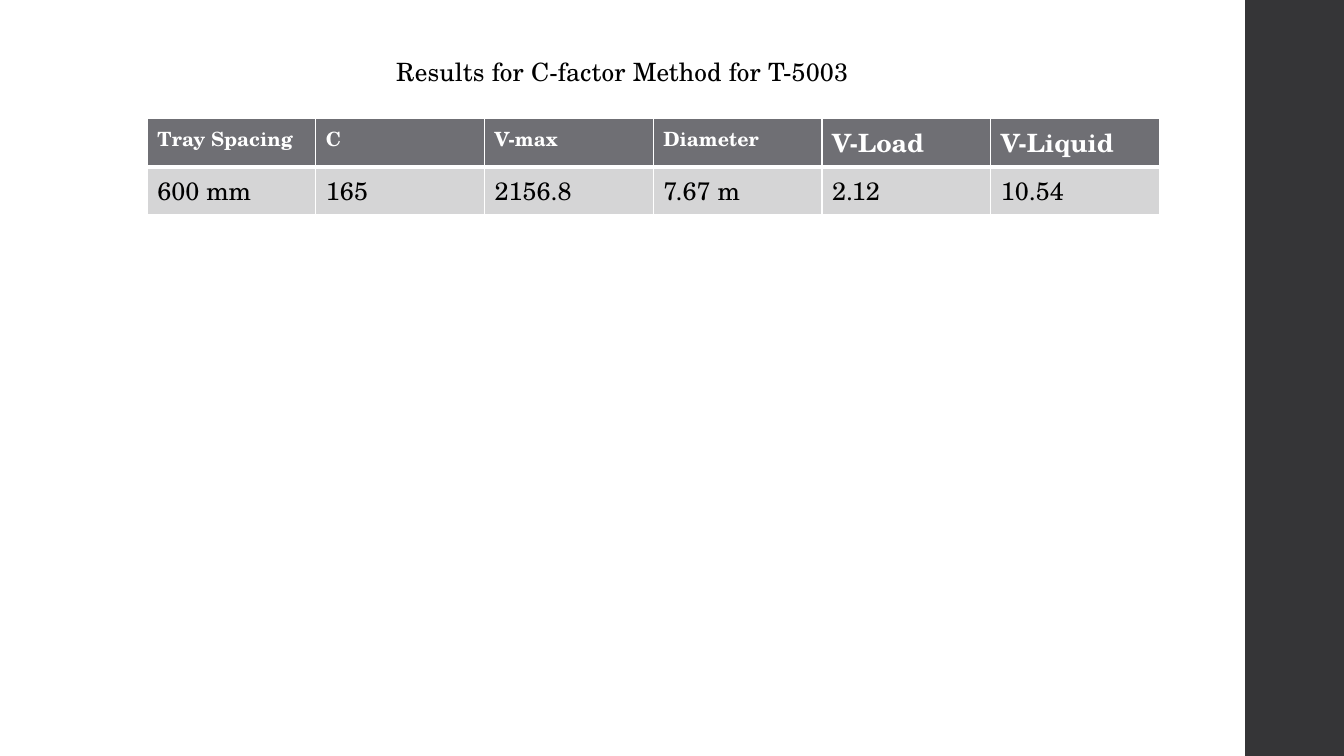
from lxml.etree import SubElement
from pptx import Presentation
from pptx.dml.color import RGBColor
from pptx.enum.shapes import MSO_SHAPE
from pptx.enum.text import MSO_ANCHOR, MSO_AUTO_SIZE, PP_ALIGN
from pptx.oxml.ns import qn
from pptx.util import Inches, Pt

COLORS = {
    "side band": "353537",
    "header": "6F6F74",
    "body": "D5D5D6",
    "white": "FFFFFF",
    "black": "000000",
}
FONT = "TeX Gyre Schola"


def write(frame, text, size=18, color="black", bold=False, align=PP_ALIGN.LEFT, spacing=0):
    paragraph = frame.paragraphs[0]
    paragraph.alignment = align
    run = paragraph.add_run()
    run.text = text
    run.font.name = FONT
    run.font.size = Pt(size)
    run.font.bold = bold
    run.font.color.rgb = RGBColor.from_string(COLORS[color])
    if spacing:
        run.font._element.set("spc", str(round(spacing * 100)))


def add_borders(cell, **widths):
    properties = cell._tc.get_or_add_tcPr()
    for position, (side, width) in enumerate(widths.items()):
        line = SubElement(properties, qn(f"a:{side}"), w=str(Pt(width)))
        fill = SubElement(line, qn("a:solidFill"))
        SubElement(fill, qn("a:srgbClr"), val=COLORS["white"])
        properties.insert(position, line)  # borders come before the fill


presentation = Presentation()
presentation.slide_width = Inches(13.33)
presentation.slide_height = Inches(7.5)
slide = presentation.slides.add_slide(presentation.slide_layouts[5])
content_width = Inches(12.35)

# Dark band along the right edge
side_band = slide.shapes.add_shape(
    MSO_SHAPE.RECTANGLE, content_width, 0,
    presentation.slide_width - content_width, presentation.slide_height)
side_band.shadow.inherit = False
side_band.fill.solid()
side_band.fill.fore_color.rgb = RGBColor.from_string(COLORS["side band"])
side_band.line.fill.background()

# Title, centred over the area left of the band
heading = slide.shapes.title
heading.left, heading.top = 0, Inches(0.46)
heading.width, heading.height = content_width, Inches(0.5)
heading.text_frame.auto_size = MSO_AUTO_SIZE.NONE
heading.text_frame.vertical_anchor = MSO_ANCHOR.MIDDLE
write(heading.text_frame, "Results for C-factor Method for T-5003",
      align=PP_ALIGN.CENTER, spacing=0.1)

# Results: column name, header size, value
results = [
    ("Tray Spacing", 14, "600 mm"),
    ("C", 14, "165"),
    ("V-max", 14, "2156.8"),
    ("Diameter", 14, "7.67 m"),
    ("V-Load", 18, "2.12"),
    ("V-Liquid", 18, "10.54"),
]
results_table = slide.shapes.add_table(
    2, len(results), Inches(1.46), Inches(1.17), Inches(10.04), Inches(0.94)).table

for column, (name, name_size, value) in enumerate(results):
    header_cell = results_table.cell(0, column)
    value_cell = results_table.cell(1, column)
    for cell, color in ((header_cell, "header"), (value_cell, "body")):
        cell.fill.solid()
        cell.fill.fore_color.rgb = RGBColor.from_string(COLORS[color])
    write(header_cell.text_frame, name, size=name_size, color="white", bold=True)
    write(value_cell.text_frame, value)
    add_borders(header_cell, lnL=1, lnR=1, lnT=1, lnB=3)
    add_borders(value_cell, lnL=1, lnR=1, lnT=3, lnB=1)

presentation.save("out.pptx")
